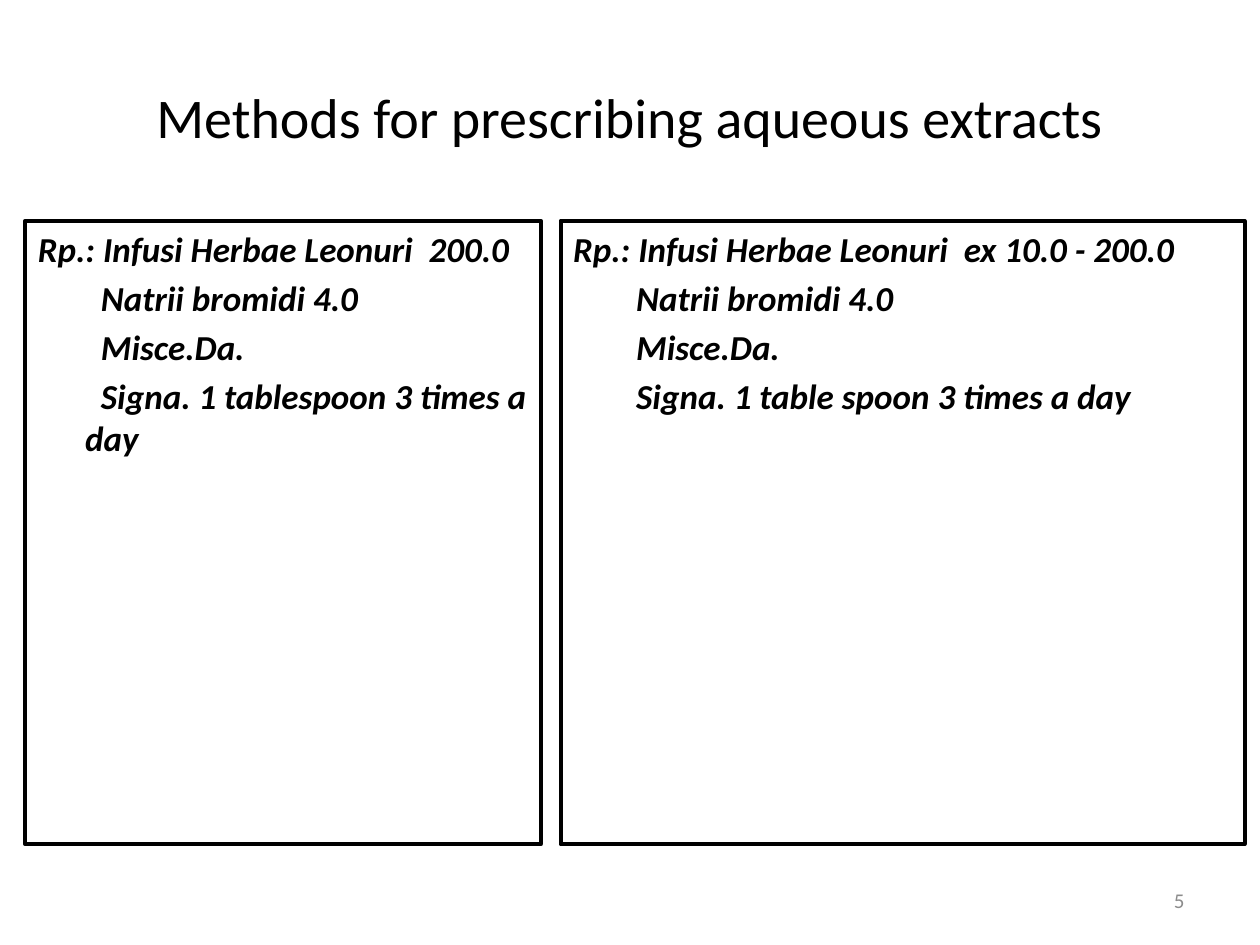
import dataclasses

import lxml.etree
import pptx
import pptx.dml.color
import pptx.enum.text
import pptx.oxml.ns
import pptx.util


@dataclasses.dataclass(frozen=True)
class Theme:
    font: str = "Calibri"
    ink: pptx.dml.color.RGBColor = pptx.dml.color.RGBColor(0, 0, 0)
    muted: pptx.dml.color.RGBColor = pptx.dml.color.RGBColor(0x8C, 0x8C, 0x8C)
    title_size: int = 32
    body_size: int = 20
    number_size: int = 12


theme = Theme()
Cm = pptx.util.Cm
Pt = pptx.util.Pt


def place(shape, left, top, width, height):
    shape.left, shape.top = Cm(left), Cm(top)
    shape.width, shape.height = Cm(width), Cm(height)


def format_runs(paragraph, size, color, emphasis=False):
    for run in paragraph.runs:
        run.font.name = theme.font
        run.font.size = Pt(size)
        run.font.color.rgb = color
        run.font.bold = run.font.italic = emphasis


presentation = pptx.Presentation()
presentation.slide_width, presentation.slide_height = Cm(25.4), Cm(19.05)
slide = presentation.slides.add_slide(presentation.slide_layouts[3])

# Title
title = slide.shapes.title
place(title, 1.27, 0.76, 22.86, 3.18)
title.text_frame.text = "Methods for prescribing aqueous extracts"
title.text_frame.vertical_anchor = pptx.enum.text.MSO_ANCHOR.MIDDLE
title.text_frame.paragraphs[0].alignment = pptx.enum.text.PP_ALIGN.CENTER
format_runs(title.text_frame.paragraphs[0], theme.title_size, theme.ink)

# Two framed prescriptions: left edge, width, first and last line
prescriptions = [
    (0.51, 10.39, "Rp.: Infusi Herbae Leonuri  200.0",
     "Signa. 1 tablespoon 3 times a day"),
    (11.3, 13.79, "Rp.: Infusi Herbae Leonuri  ex 10.0 - 200.0",
     "Signa. 1 table spoon 3 times a day"),
]
hanging = 0.95
for index, (left, width, heading, directions) in enumerate(prescriptions, start=1):
    body = slide.placeholders[index]
    place(body, left, 4.45, width, 12.57)
    body.line.color.rgb = theme.ink
    body.line.width = Pt(2.25)
    text_frame = body.text_frame
    text_frame.text = "\n".join(
        [heading, "Natrii bromidi 4.0", "Misce.Da.", directions])
    text_frame.auto_size = pptx.enum.text.MSO_AUTO_SIZE.NONE
    for line, paragraph in enumerate(text_frame.paragraphs):
        paragraph.space_before = Pt(4 if line else 0)
        properties = paragraph._p.get_or_add_pPr()
        properties.set("marL", str(Cm(hanging)))
        properties.set("indent", str(Cm(0.32 if line else -hanging)))
        lxml.etree.SubElement(properties, pptx.oxml.ns.qn("a:buNone"))
        format_runs(paragraph, theme.body_size, theme.ink, emphasis=True)

# Slide number
number = slide.shapes.add_textbox(0, 0, 0, 0)
place(number, 18.2, 17.65, 5.93, 1.01)
number.text_frame.text = "5"
number.text_frame.word_wrap = True
number.text_frame.vertical_anchor = pptx.enum.text.MSO_ANCHOR.MIDDLE
number.text_frame.paragraphs[0].alignment = pptx.enum.text.PP_ALIGN.RIGHT
format_runs(number.text_frame.paragraphs[0], theme.number_size, theme.muted)

presentation.save("out.pptx")
